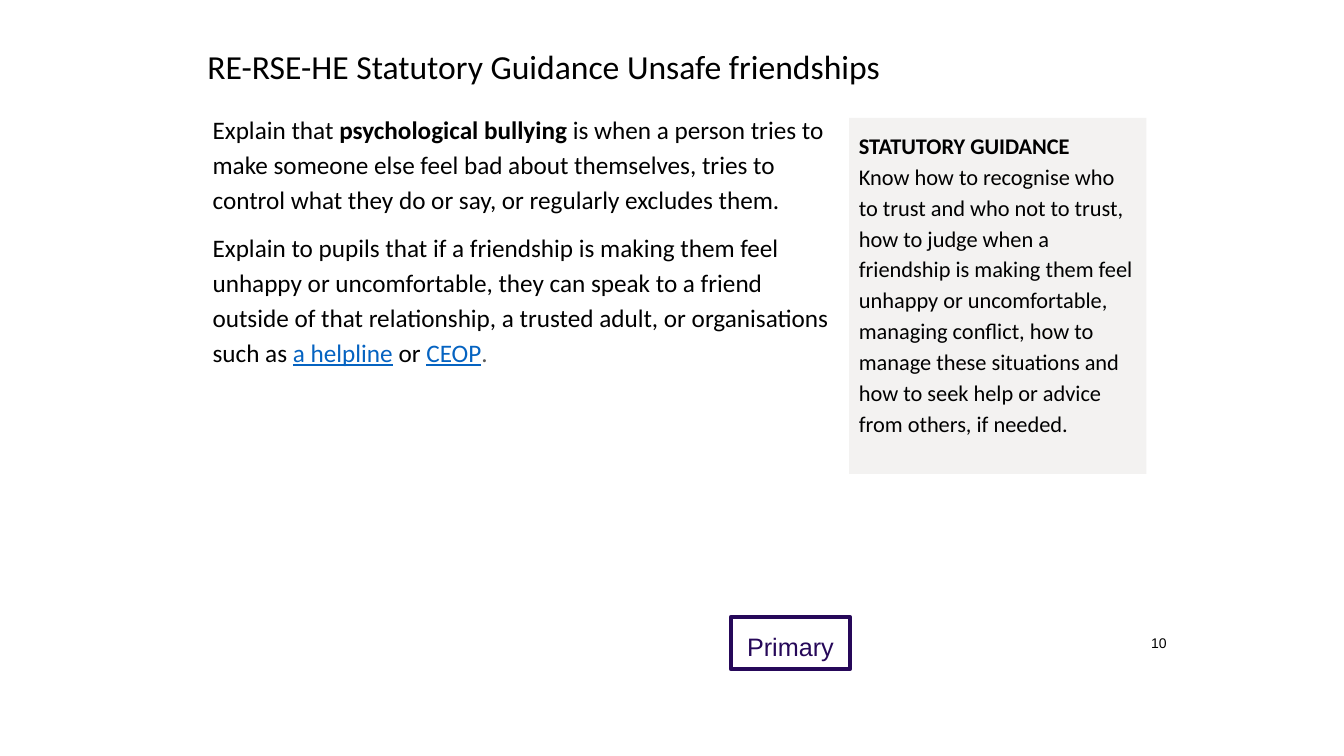
from dataclasses import dataclass

from pptx import Presentation
from pptx.dml.color import RGBColor
from pptx.enum.shapes import MSO_SHAPE as Shape
from pptx.enum.text import MSO_ANCHOR as Anchor, PP_ALIGN as Align
from pptx.util import Inches, Pt


@dataclass(frozen=True)
class Theme:
    ink: str = "000000"
    link: str = "0563C1"
    muted: str = "595959"
    panel: str = "F3F2F1"
    badge: str = "260859"
    text_font: str = "Calibri"
    label_font: str = "Arial"
    title_size: int = 24
    body_size: int = 18
    panel_size: int = 16
    number_size: int = 10
    line_spacing: float = 1.15
    inset: float = 0.1


THEME = Theme()
WIDTH, HEIGHT = 13.33, 7.5

# Left, top, width and height as shares of the slide
TITLE_BOX = (0.147, 0.048, 0.666, 0.084)
BODY_BOX = (0.1508, 0.132, 0.481, 0.535)
PANEL_BOX = (0.6317, 0.156, 0.2213, 0.4707)
BADGE_BOX = (0.5439, 0.816, 0.0885, 0.0693)
NUMBER_BOX = (0.8462, 0.8253, 0.0293, 0.0493)


def inches(box):
    left, top, width, height = box
    return (Inches(left * WIDTH), Inches(top * HEIGHT),
            Inches(width * WIDTH), Inches(height * HEIGHT))


def prepare_frame(frame, anchor=Anchor.TOP):
    frame.word_wrap = True
    frame.vertical_anchor = anchor
    frame.margin_left = frame.margin_right = Inches(THEME.inset)
    frame.margin_top = frame.margin_bottom = Inches(THEME.inset)
    return frame


def add_text_area(slide, box, anchor=Anchor.TOP):
    return prepare_frame(slide.shapes.add_textbox(*inches(box)).text_frame, anchor)


def add_rectangle(slide, box):
    rectangle = slide.shapes.add_shape(Shape.RECTANGLE, *inches(box))
    rectangle.shadow.inherit = False
    prepare_frame(rectangle.text_frame)
    return rectangle


def style(font, size, color=THEME.ink, face=THEME.text_font, bold=False, underline=False):
    font.name, font.size = face, Pt(size)
    font.color.rgb = RGBColor.from_string(color)
    font.bold, font.underline = bold, underline


def write_line(frame, wording, size, align=Align.LEFT, spacing=1.0, **look):
    frame.text = wording
    line = frame.paragraphs[0]
    line.alignment, line.line_spacing = align, spacing
    style(line.runs[0].font, size, **look)


def write_pieces(paragraph, pieces, size):
    """Write (wording, look) pieces as runs of one paragraph."""
    paragraph.alignment = Align.LEFT
    paragraph.line_spacing = THEME.line_spacing
    for wording, look in pieces:
        run = paragraph.add_run()
        run.text = wording
        style(run.font, size, **look)


def add_title(slide, box):
    write_line(add_text_area(slide, box),
               "RE-RSE-HE Statutory Guidance Unsafe friendships", THEME.title_size)


def add_explanation(slide, box):
    link = {"color": THEME.link, "underline": True}
    muted = {"color": THEME.muted}
    frame = add_text_area(slide, box)
    bullying = frame.paragraphs[0]
    write_pieces(bullying, [
        ("Explain that ", {}),
        ("psychological bullying ", {"bold": True}),
        ("is when a person tries to make someone else feel bad about themselves, "
         "tries to control what they do or say, or regularly excludes them.", {}),
    ], THEME.body_size)
    support = frame.add_paragraph()
    support.space_before = Pt(10)
    write_pieces(support, [
        ("Explain to pupils that if a friendship is making them feel unhappy or "
         "uncomfortable, they can speak to a friend outside of that relationship, "
         "a trusted adult, or organisations such as ", {}),
        ("a helpline", link),
        (" ", muted),
        ("or ", {}),
        ("CEOP", link),
        (".", muted),
    ], THEME.body_size)


def add_guidance_panel(slide, box):
    panel = add_rectangle(slide, box)
    panel.fill.solid()
    panel.fill.fore_color.rgb = RGBColor.from_string(THEME.panel)
    panel.line.fill.background()
    guidance = panel.text_frame.paragraphs[0]
    write_pieces(guidance, [("STATUTORY GUIDANCE", {"bold": True})], THEME.panel_size)
    guidance.add_line_break()
    write_pieces(guidance, [
        ("Know how to recognise who to trust and who not to trust, how to judge "
         "when a friendship is making them feel unhappy or uncomfortable, managing "
         "conflict, how to manage these situations and how to seek help or advice "
         "from others, if needed.", {}),
    ], THEME.panel_size)


def add_phase_badge(slide, box):
    badge = add_rectangle(slide, box)
    badge.fill.background()
    badge.line.color.rgb = RGBColor.from_string(THEME.badge)
    badge.line.width = Pt(3)
    write_line(badge.text_frame, "Primary", THEME.body_size, Align.CENTER,
               THEME.line_spacing, color=THEME.badge, face=THEME.label_font)


def add_page_number(slide, box):
    write_line(add_text_area(slide, box, Anchor.MIDDLE), "10", THEME.number_size,
               Align.RIGHT, face=THEME.label_font)


def main():
    deck = Presentation()
    deck.slide_width, deck.slide_height = Inches(WIDTH), Inches(HEIGHT)
    slide = deck.slides.add_slide(deck.slide_layouts[6])
    add_title(slide, TITLE_BOX)
    add_phase_badge(slide, BADGE_BOX)
    add_explanation(slide, BODY_BOX)
    add_guidance_panel(slide, PANEL_BOX)
    add_page_number(slide, NUMBER_BOX)
    deck.save("out.pptx")


if __name__ == "__main__":
    main()
